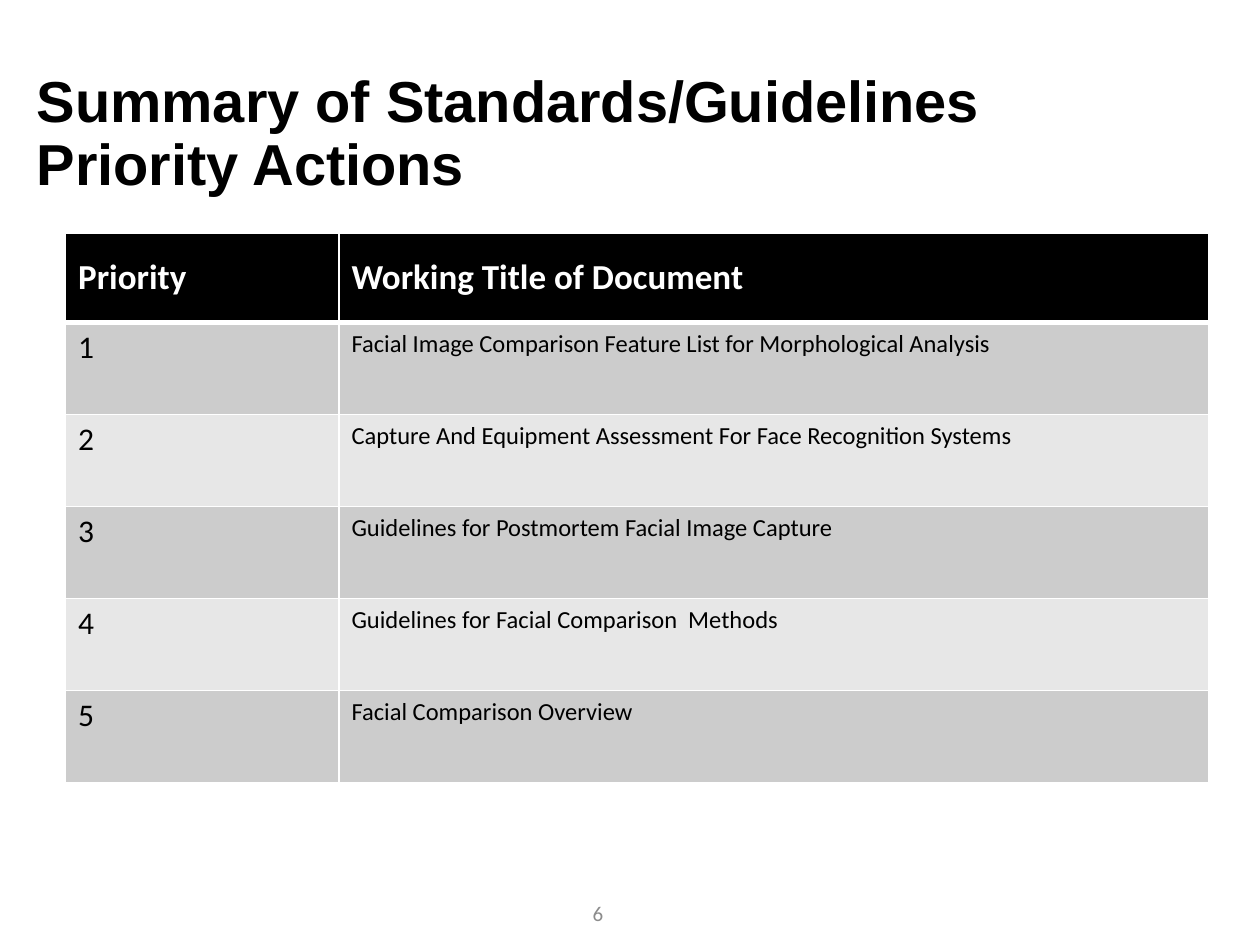
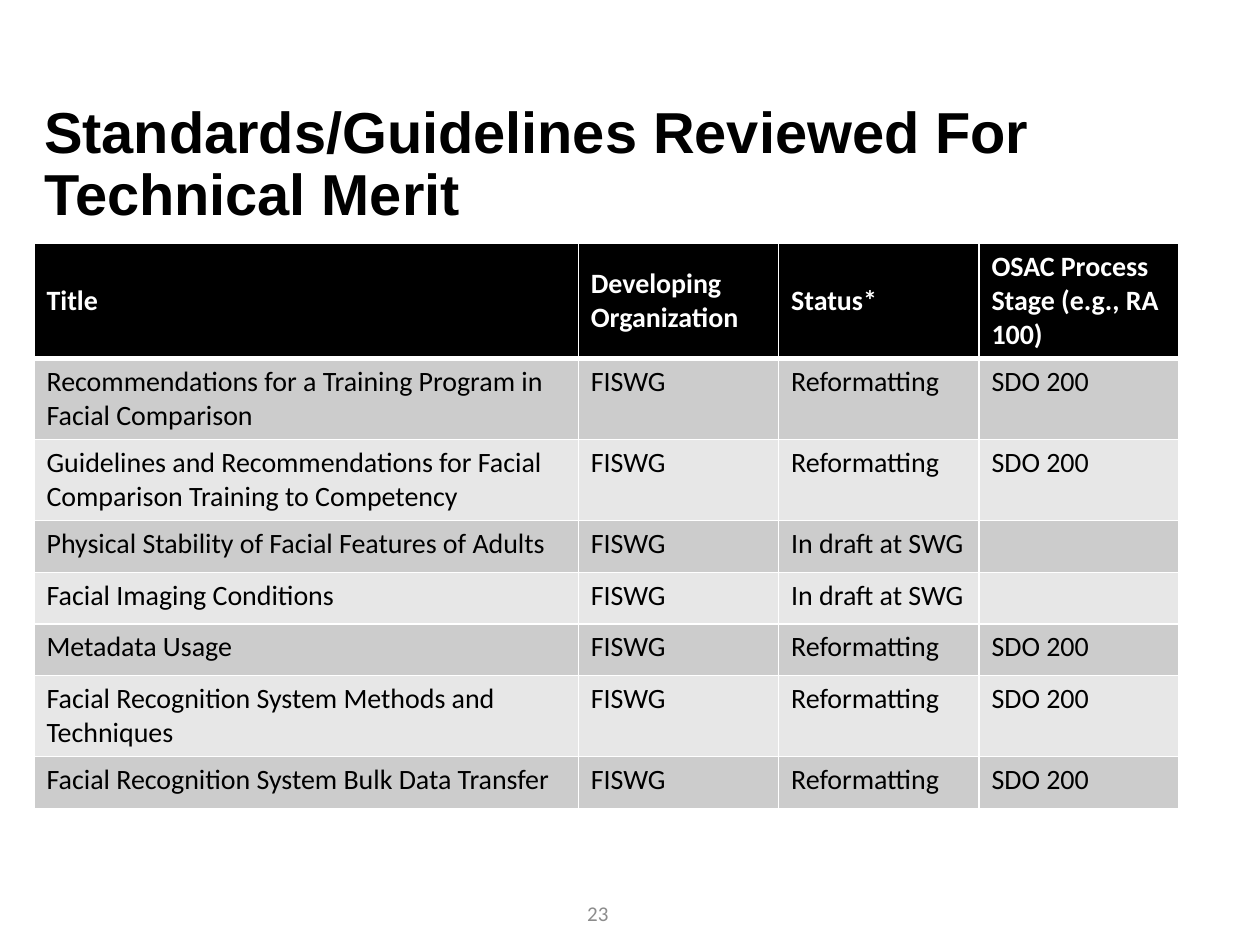
from lxml.etree import SubElement
from pptx import Presentation
from pptx.dml.color import RGBColor
from pptx.enum.text import MSO_ANCHOR, MSO_AUTO_SIZE, PP_ALIGN
from pptx.oxml.ns import qn
from pptx.util import Inches, Pt

BLACK = RGBColor(0x00, 0x00, 0x00)
WHITE = RGBColor(0xFF, 0xFF, 0xFF)
GREY = RGBColor(0x8C, 0x8C, 0x8C)
BANDS = [RGBColor(0xE7, 0xE7, 0xE7), RGBColor(0xCC, 0xCC, 0xCC)]


def put(frame, text, size=16, color=BLACK, bold=False, font="Calibri",
        align=PP_ALIGN.LEFT, space=1.0):
    par = frame.paragraphs[0]
    par.alignment = align
    par.line_spacing = space
    run = par.add_run()
    run.text = text
    run.font.name = font
    run.font.size = Pt(size)
    run.font.bold = bold
    run.font.color.rgb = color


def edge(cell, side, width):
    line = SubElement(cell._tc.get_or_add_tcPr(), qn(f"a:ln{side}"), w=str(Pt(width)))
    fill = SubElement(line, qn("a:solidFill"))
    SubElement(fill, qn("a:srgbClr"), val=str(WHITE))


# Content of each slide
plan = {
    "title": "Summary of Standards/Guidelines Priority Actions",
    "spot": (0.19, 0.35),
    "table": (0.52, 1.85),
    "cols": [2.17, 6.9],
    "rows": (0.71, 0.73),
    "head": 20,
    "sizes": [18, 14],
    "page": "6",
    "cells": [
        ("Priority", "Working Title of Document"),
        ("1", "Facial Image Comparison Feature List for Morphological Analysis"),
        ("2", "Capture And Equipment Assessment For Face Recognition Systems"),
        ("3", "Guidelines for Postmortem Facial Image Capture"),
        ("4", "Guidelines for Facial Comparison  Methods"),
        ("5", "Facial Comparison Overview"),
    ],
}
group, redo, draft, stage = "FISWG", "Reformatting", "In draft at SWG", "SDO 200"
merit = {
    "title": "Standards/Guidelines Reviewed For Technical Merit",
    "spot": (0.25, 0.59),
    "table": (0.27, 1.93),
    "cols": [4.32, 1.59, 1.59, 1.59],
    "rows": (0.68, 0.41),
    "head": 16,
    "sizes": [16] * 4,
    "page": "23",
    "cells": [
        ("Title", "Developing Organization", "Status*",
         "OSAC Process Stage (e.g., RA 100)"),
        ("Recommendations for a Training Program in Facial Comparison",
         group, redo, stage),
        ("Guidelines and Recommendations for Facial Comparison Training to Competency",
         group, redo, stage),
        ("Physical Stability of Facial Features of Adults", group, draft, ""),
        ("Facial Imaging Conditions", group, draft, ""),
        ("Metadata Usage", group, redo, stage),
        ("Facial Recognition System Methods and Techniques", group, redo, stage),
        ("Facial Recognition System Bulk Data Transfer", group, redo, stage),
    ],
}

deck = Presentation()
deck.slide_width = Inches(10)
deck.slide_height = Inches(7.5)

for data in (plan, merit):
    slide = deck.slides.add_slide(deck.slide_layouts[5])

    # Title
    title = slide.shapes.title
    title.left, title.top = map(Inches, data["spot"])
    title.width, title.height = Inches(8.62), Inches(1.45)
    frame = title.text_frame
    frame.word_wrap = True
    frame.auto_size = MSO_AUTO_SIZE.NONE
    frame.vertical_anchor = MSO_ANCHOR.MIDDLE
    put(frame, data["title"], size=33, bold=True, font="Arial", space=0.9)

    # Table size
    cells, cols = data["cells"], data["cols"]
    first, rest = data["rows"]
    tall = first + rest * (len(cells) - 1)
    left, top = data["table"]
    table = slide.shapes.add_table(len(cells), len(cols), Inches(left), Inches(top),
                                   Inches(sum(cols)), Inches(tall)).table
    for col, width in zip(table.columns, cols):
        col.width = Inches(width)

    # Table cells: black header, banded body, white rules
    for r, texts in enumerate(cells):
        table.rows[r].height = Inches(rest if r else first)
        for c, text in enumerate(texts):
            cell = table.cell(r, c)
            for side in "LRTB":
                thick = (r, side) in ((0, "B"), (1, "T"))
                edge(cell, side, 3 if thick else 1)
            cell.fill.solid()
            cell.fill.fore_color.rgb = BANDS[r % 2] if r else BLACK
            cell.vertical_anchor = MSO_ANCHOR.TOP if r else MSO_ANCHOR.MIDDLE
            if r == 0:
                put(cell.text_frame, text, size=data["head"], color=WHITE, bold=True)
            elif text:
                put(cell.text_frame, text, size=data["sizes"][c])

    # Page number
    box = slide.shapes.add_textbox(Inches(3.62), Inches(7.05), Inches(2.25), Inches(0.4))
    box.text_frame.word_wrap = True
    box.text_frame.vertical_anchor = MSO_ANCHOR.MIDDLE
    put(box.text_frame, data["page"], size=12, color=GREY, align=PP_ALIGN.CENTER)

deck.save("out.pptx")
